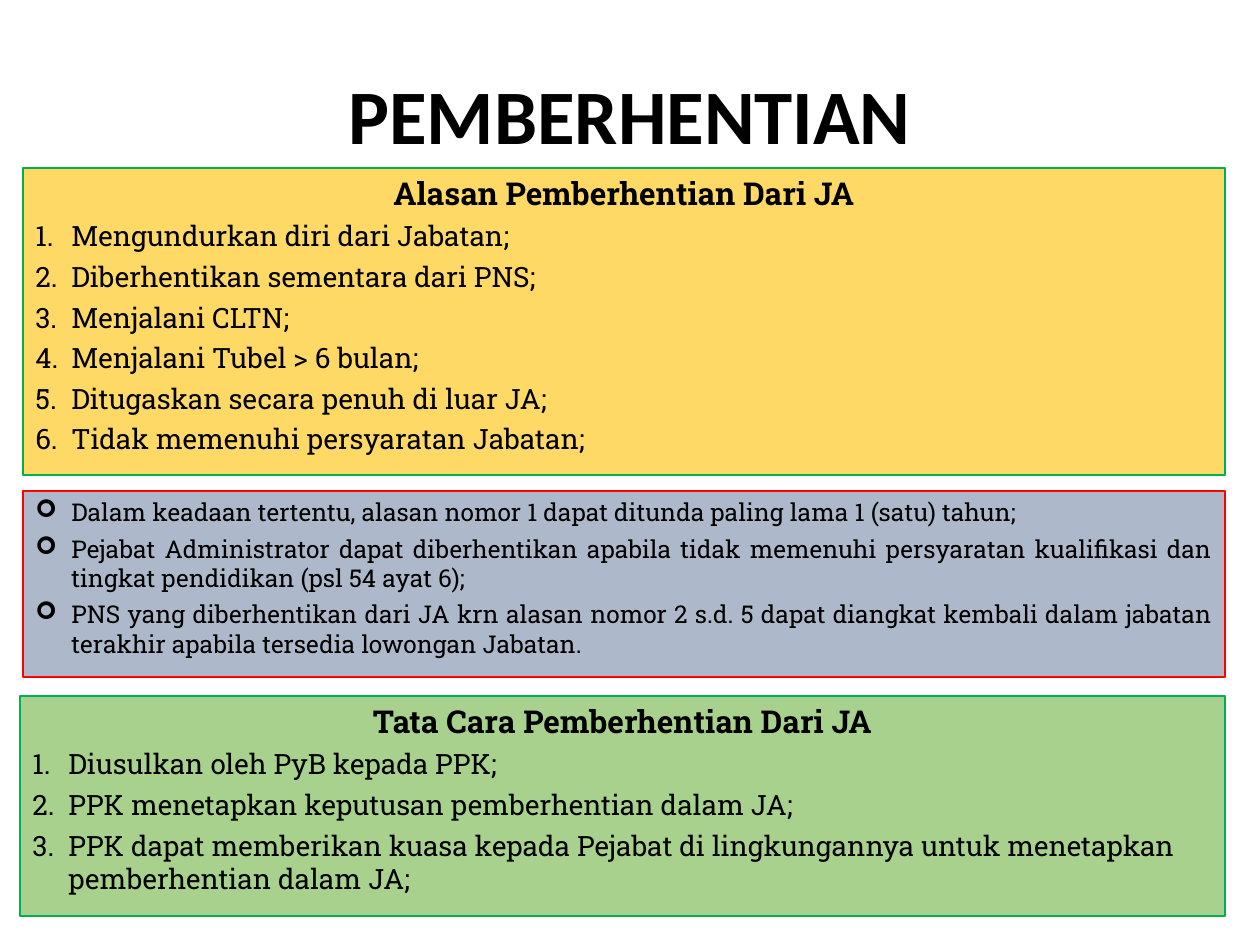
from dataclasses import dataclass
from lxml.etree import SubElement
from pptx import Presentation
from pptx.dml.color import RGBColor
from pptx.enum.shapes import MSO_SHAPE
from pptx.enum.text import MSO_ANCHOR, MSO_AUTO_SIZE, PP_ALIGN
from pptx.oxml.ns import qn
from pptx.util import Pt


@dataclass
class Theme:
    ink: str = "000000"
    gold: str = "FFD966"
    slate: str = "ADB9CA"
    leaf: str = "A9D18E"
    red: str = "FF0000"
    green: str = "00B050"
    sans: str = "Calibri"
    slab: str = "Roboto Slab"
    title: int = 44
    head: int = 18
    item: int = 16
    note: int = 14


theme = Theme()
PX = 914400 // 126


def add_text(para, text, font, size, bold=False):
    run = para.add_run()
    run.text = text
    run.font.name = font
    run.font.size = Pt(size)
    run.font.bold = bold
    run.font.color.rgb = RGBColor.from_string(theme.ink)


def add_mark(para, mark):
    props = para._p.get_or_add_pPr()
    props.set("marL", str(36 * PX))
    props.set("indent", str(-36 * PX))
    if mark == "1.":
        SubElement(props, qn("a:buFont"), typeface="+mj-lt")
        SubElement(props, qn("a:buAutoNum"), type="arabicPeriod")
    else:
        SubElement(props, qn("a:buFont"), typeface="Wingdings")
        SubElement(props, qn("a:buChar"), char=mark)


deck = Presentation()
deck.slide_width = 1260 * PX
deck.slide_height = 945 * PX
slide = deck.slides.add_slide(deck.slide_layouts[5])

title = slide.shapes.title
title.left, title.top, title.width, title.height = (
    n * PX for n in (87, 3, 1086, 165))
frame = title.text_frame
frame.word_wrap = True
frame.auto_size = MSO_AUTO_SIZE.NONE
frame.vertical_anchor = MSO_ANCHOR.BOTTOM
para = frame.paragraphs[0]
para.alignment = PP_ALIGN.CENTER
para.line_spacing = 0.9
add_text(para, "PEMBERHENTIAN", theme.sans, theme.title, True)

panels = [
    ((23, 491, 1202, 186), theme.slate, theme.red, None, "➢", theme.note,
     PP_ALIGN.JUSTIFY, [
        "Dalam keadaan tertentu, alasan nomor 1 dapat ditunda paling lama 1 (satu) tahun;",
        "Pejabat Administrator dapat diberhentikan apabila tidak memenuhi persyaratan kualifikasi dan tingkat pendidikan (psl 54 ayat 6);",
        "PNS yang diberhentikan dari JA krn alasan nomor 2 s.d. 5 dapat diangkat kembali dalam jabatan terakhir apabila tersedia lowongan Jabatan.",
    ]),
    ((23, 168, 1202, 307), theme.gold, theme.green,
     "Alasan Pemberhentian Dari JA", "1.", theme.item, PP_ALIGN.LEFT, [
        "Mengundurkan diri dari Jabatan;",
        "Diberhentikan sementara dari PNS;",
        "Menjalani CLTN;",
        "Menjalani Tubel > 6 bulan;",
        "Ditugaskan secara penuh di luar JA;",
        "Tidak memenuhi persyaratan Jabatan;",
    ]),
    ((20, 696, 1205, 220), theme.leaf, theme.green,
     "Tata Cara Pemberhentian Dari JA", "1.", theme.item, PP_ALIGN.LEFT, [
        "Diusulkan oleh PyB kepada PPK;",
        "PPK menetapkan keputusan pemberhentian dalam JA;",
        "PPK dapat memberikan kuasa kepada Pejabat di lingkungannya untuk menetapkan pemberhentian dalam JA;",
    ]),
]

for rect, fill, edge, head, mark, size, align, items in panels:
    panel = slide.shapes.add_shape(MSO_SHAPE.RECTANGLE, *(n * PX for n in rect))
    panel.shadow.inherit = False
    panel.fill.solid()
    panel.fill.fore_color.rgb = RGBColor.from_string(fill)
    panel.line.color.rgb = RGBColor.from_string(edge)
    panel.line.width = Pt(1)
    frame = panel.text_frame
    frame.word_wrap = True
    frame.vertical_anchor = MSO_ANCHOR.TOP
    para = frame.paragraphs[0]
    if head:
        para.alignment = PP_ALIGN.CENTER
        para.space_after = Pt(4)
        add_text(para, head, theme.slab, theme.head, True)
        para = frame.add_paragraph()
    for spot, item in enumerate(items):
        if spot:
            para = frame.add_paragraph()
        para.alignment = align
        para.space_after = Pt(4)
        add_mark(para, mark)
        add_text(para, item, theme.slab, size)

deck.save("out.pptx")
